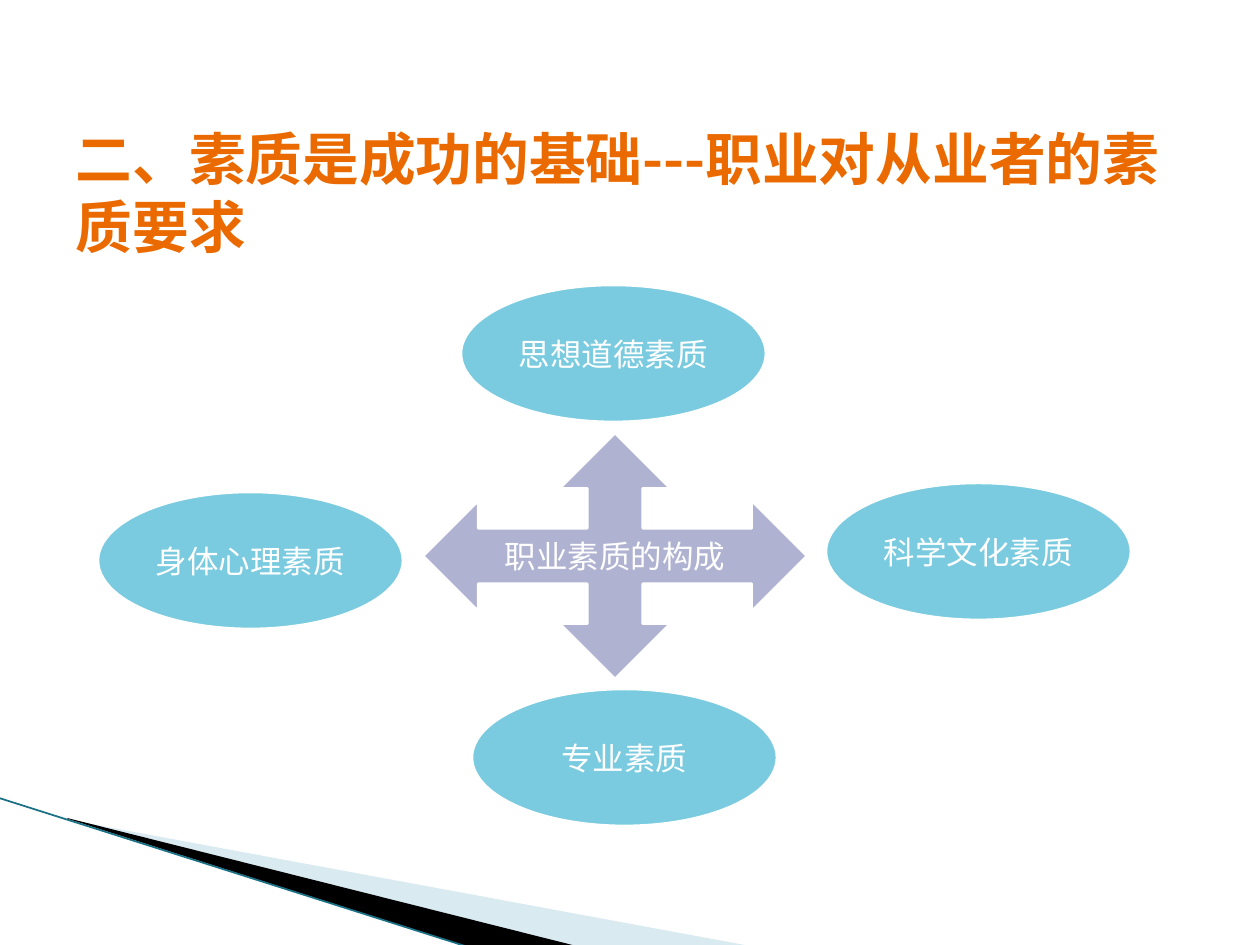
from lxml.etree import SubElement
from pptx import Presentation
from pptx.dml.color import RGBColor
from pptx.enum.shapes import MSO_CONNECTOR as Connector, MSO_SHAPE as Shape
from pptx.enum.text import MSO_ANCHOR as Anchor, PP_ALIGN as Align
from pptx.oxml.ns import qn
from pptx.util import Pt

PX = 914400 // 126
CJK_FONT = "Noto Sans CJK SC"
LATIN_FONT = "DejaVu Sans Mono"
OVAL_SIZE = (305, 137)
OVALS = [
    ("思想道德素质", 363, 0),
    ("专业素质", 374, 404),
    ("身体心理素质", 0, 207),
    ("科学文化素质", 728, 198),
]


def px(*lengths):
    return [length * PX for length in lengths]


def color(value):
    return RGBColor.from_string(value)


def paint(shape, value):
    shape.fill.solid()
    shape.fill.fore_color.rgb = color(value)
    shape.shadow.inherit = False


def write(shape, text, size, value, latin, align, bold=False):
    frame = shape.text_frame
    frame.text = text
    frame.word_wrap = True
    para = frame.paragraphs[0]
    para.alignment = align
    span = para.runs[0]
    span.font.size = Pt(size)
    span.font.bold = bold
    span.font.color.rgb = color(value)
    span.font.name = latin
    SubElement(span.font._element, qn("a:ea"), typeface=CJK_FONT)


def add_wedge(page, points, value):
    builder = page.shapes.build_freeform(*points[0], scale=PX)
    builder.add_line_segments(points[1:], close=True)
    wedge = builder.convert_to_shape()
    paint(wedge, value)
    wedge.line.fill.background()
    return wedge


def add_corner(page, left, top):
    def place(*points):
        return [(left + x, top + y) for x, y in points]

    pale = add_wedge(page, place((69, 22), (750, 148), (575, 148), (69, 21)), "A0CBDC")
    tint = pale.fill._xPr.find(".//" + qn("a:srgbClr"))
    SubElement(tint, qn("a:alpha"), val="40000")
    add_wedge(page, place((67, 20), (576, 148), (469, 149), (68, 21)), "000000")
    start, end = place((-1, 0), (468, 149))
    edge = page.shapes.add_connector(Connector.STRAIGHT, *px(*start, *end))
    edge.line.color.rgb = color("1A7084")
    edge.line.width = Pt(1)
    SubElement(edge._element.spPr, qn("a:effectLst"))


def add_title(page, left, top, width, height):
    title = page.shapes.title
    title.left, title.top, title.width, title.height = px(left, top, width, height)
    write(title, "二、素质是成功的基础---职业对从业者的素质要求", 32.4, "EA6A00",
          CJK_FONT, Align.LEFT, bold=True)
    frame = title.text_frame
    frame.vertical_anchor = Anchor.BOTTOM
    frame.margin_top = frame.margin_bottom = 0
    frame.paragraphs[0].line_spacing = 1.0


def add_node(page, kind, text, box, value):
    node = page.shapes.add_shape(kind, *px(*box))
    paint(node, value)
    node.line.color.rgb = color("FFFFFF")
    node.line.width = Pt(1.5)
    write(node, text, 18, "FFFFFF", LATIN_FONT, Align.CENTER)
    frame = node.text_frame
    frame.vertical_anchor = Anchor.MIDDLE
    frame.margin_left = frame.margin_right = 0
    frame.margin_top = frame.margin_bottom = 0


def add_diagram(page, left, top):
    add_node(page, Shape.QUAD_ARROW, "职业素质的构成",
             (left + 325, top + 148, 384, 246), "AFB2D0")
    for text, x, y in OVALS:
        add_node(page, Shape.OVAL, text, (left + x, top + y, *OVAL_SIZE), "7ACBE0")


def main():
    deck = Presentation()
    deck.slide_width, deck.slide_height = px(1260, 945)
    page = deck.slides.add_slide(deck.slide_layouts[5])
    add_corner(page, 0, 798)
    add_title(page, 63, 38, 1134, 222)
    add_diagram(page, 98, 285)
    deck.save("out.pptx")


if __name__ == "__main__":
    main()
